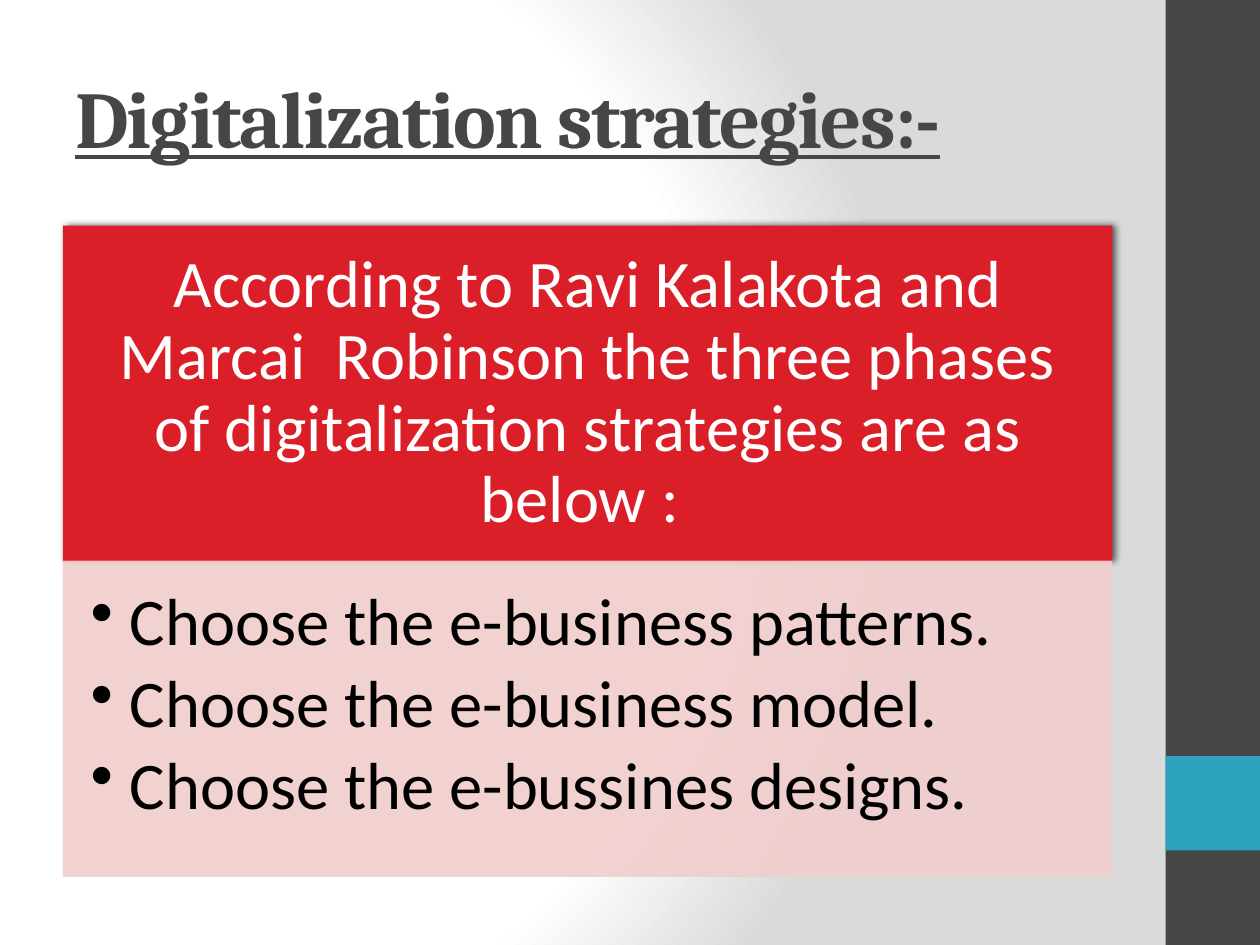
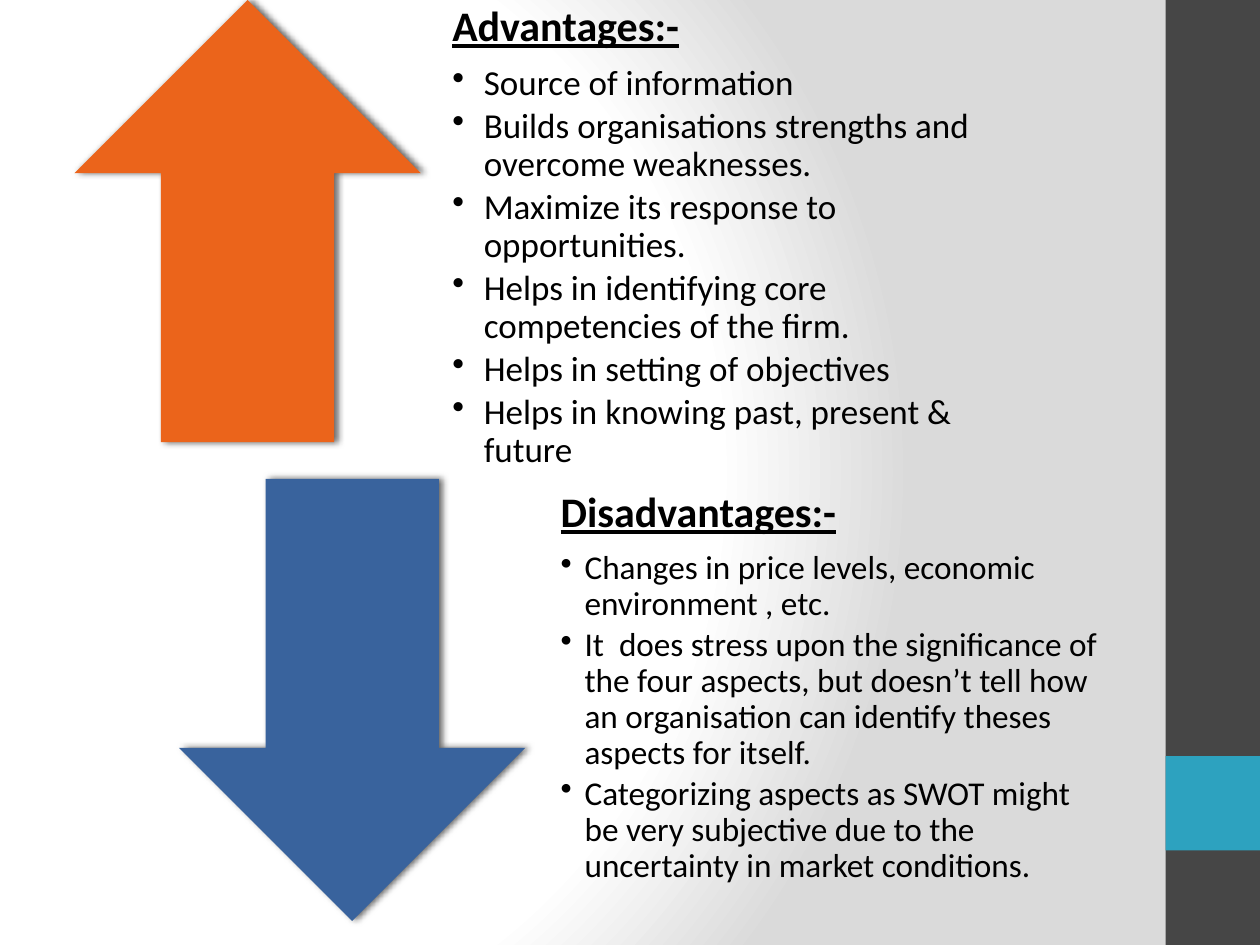
"""Builds two slides on digitalization strategies and SWOT analysis."""
import dataclasses

import pptx
import pptx.dml.color
import pptx.enum.shapes
import pptx.enum.text
import pptx.oxml
import pptx.oxml.ns
import pptx.util

SHAPE = pptx.enum.shapes.MSO_SHAPE
ALIGN = pptx.enum.text.PP_ALIGN
ANCHOR = pptx.enum.text.MSO_ANCHOR
NS = pptx.oxml.ns.nsdecls("a")
PX = 9144


@dataclasses.dataclass(frozen=True)
class Theme:
    heading_font: str = "Cambria"
    body_font: str = "Calibri"
    page: str = "FFFFFF"
    page_edge: str = "DADADA"
    dark: str = "464646"
    accent: str = "2DA2BF"
    red: str = "DA1F28"
    pink: str = "F1CDCD"
    orange: str = "EB641B"
    blue: str = "39639D"
    white: str = "FFFFFF"
    black: str = "000000"
    title_size: int = 46
    panel_size: int = 38
    subhead_size: int = 24
    advantage_size: int = 20
    disadvantage_size: int = 19


T = Theme()

STRATEGIES = [
    "Choose the e-business patterns.",
    "Choose the e-business model.",
    "Choose the e-bussines designs.",
]
ADVANTAGES = [
    "Source of information",
    "Builds organisations strengths and overcome weaknesses.",
    "Maximize its response to opportunities.",
    "Helps in identifying core competencies of the firm.",
    "Helps in setting of objectives",
    "Helps in knowing past, present & future",
]
DISADVANTAGES = [
    "Changes in price levels, economic environment , etc.",
    "It  does stress upon the significance of the four aspects, but "
    "doesn’t tell how an organisation can identify theses aspects for itself.",
    "Categorizing aspects as SWOT might be very subjective due to the "
    "uncertainty in market conditions.",
]


def px(*values):
    return [pptx.util.Emu(v * PX) for v in values]


def rgb(color):
    return pptx.dml.color.RGBColor.from_string(color)


def set_background(prs):
    master = prs.slide_master
    master.background.fill.gradient()
    grad = master.element.find(".//" + pptx.oxml.ns.qn("a:gradFill"))
    stops = [(0, T.page), (75, T.page), (100, T.page_edge)]
    gs = "".join(f'<a:gs pos="{pos * 1000}"><a:srgbClr val="{color}"/></a:gs>'
                 for pos, color in stops)
    grad.getparent().replace(grad, pptx.oxml.parse_xml(
        f'<a:gradFill {NS} rotWithShape="1"><a:gsLst>{gs}</a:gsLst>'
        '<a:path path="circle"><a:fillToRect l="20000" t="50000" r="100000" b="50000"/>'
        '</a:path></a:gradFill>'))


def add_block(s, kind, box, color, shadow=False, opacity=100):
    sp = s.shapes.add_shape(kind, *px(*box))
    sp.shadow.inherit = False
    sp.fill.solid()
    sp.fill.fore_color.rgb = rgb(color)
    sp.line.fill.background()
    if opacity < 100:
        clr = sp.fill._xPr.find(".//" + pptx.oxml.ns.qn("a:srgbClr"))
        clr.append(pptx.oxml.parse_xml(f'<a:alpha {NS} val="{opacity * 1000}"/>'))
    if shadow:
        effects = sp.element.spPr.find(pptx.oxml.ns.qn("a:effectLst"))
        effects.append(pptx.oxml.parse_xml(
            f'<a:outerShdw {NS} blurRad="50800" dist="25400" dir="0" rotWithShape="0">'
            f'<a:srgbClr val="{T.black}"><a:alpha val="60000"/></a:srgbClr></a:outerShdw>'))
    return sp


def set_frame(sp, insets, anchor):
    tf = sp.text_frame
    tf.word_wrap = True
    tf.vertical_anchor = anchor
    tf.margin_left, tf.margin_top, tf.margin_right, tf.margin_bottom = px(*insets)
    return tf


def add_run(p, text, size, color, font=T.body_font, strong=False):
    r = p.add_run()
    r.text = text
    r.font.name = font
    r.font.size = pptx.util.Pt(size)
    r.font.color.rgb = rgb(color)
    r.font.bold = strong
    r.font.underline = strong
    return r


def space_lines(p, size, after):
    p.line_spacing = 0.9
    p.space_after = pptx.util.Pt(round(size * after, 1))


def add_bullets(tf, items, size, indent):
    for item in items:
        p = tf.paragraphs[0] if not tf.paragraphs[0].runs else tf.add_paragraph()
        p.alignment = ALIGN.LEFT
        p.level = 1
        space_lines(p, size, 0.15)
        pPr = p._p.get_or_add_pPr()
        pPr.set("marL", str(indent * PX))
        pPr.set("indent", str(-indent * PX))
        pPr.append(pptx.oxml.parse_xml(f'<a:buChar {NS} char="•"/>'))
        add_run(p, item, size, T.black)


def add_title(s, text):
    sp = s.shapes.add_textbox(*px(50, 30, 833, 125))
    tf = set_frame(sp, (10, 5, 10, 5), ANCHOR.MIDDLE)
    r = add_run(tf.paragraphs[0], text, T.title_size, T.dark, T.heading_font, strong=True)
    r.font._element.set("spc", "-100")


def add_statement(s, box, text):
    sp = add_block(s, SHAPE.RECTANGLE, box, T.red, shadow=True)
    tf = set_frame(sp, (30, 17, 30, 17), ANCHOR.MIDDLE)
    p = tf.paragraphs[0]
    p.alignment = ALIGN.CENTER
    space_lines(p, T.panel_size, 0.35)
    add_run(p, text, T.panel_size, T.white)


def add_bullet_panel(s, box, items):
    sp = add_block(s, SHAPE.RECTANGLE, box, T.pink, opacity=90)
    tf = set_frame(sp, (22, 22, 30, 33), ANCHOR.TOP)
    add_bullets(tf, items, T.panel_size, 31)


def add_arrow_list(s, kind, color, arrow_at, text_at, heading, items, size, inset, indent):
    add_block(s, kind, (*arrow_at, 275, 351), color, shadow=True)
    sp = s.shapes.add_textbox(*px(*text_at, 467, 351))
    tf = set_frame(sp, (inset, 0, inset, inset), ANCHOR.MIDDLE)
    p = tf.paragraphs[0]
    space_lines(p, T.subhead_size, 0.35)
    add_run(p, heading, T.subhead_size, T.black, strong=True)
    add_bullets(tf, items, size, indent)


def add_slide(prs):
    s = prs.slides.add_slide(prs.slide_layouts[6])
    add_block(s, SHAPE.RECTANGLE, (925, 0, 75, 750), T.dark)
    add_block(s, SHAPE.RECTANGLE, (925, 600, 75, 75), T.accent)
    return s


def build_strategies(prs):
    s = add_slide(prs)
    add_title(s, "Digitalization strategies:-")
    add_statement(s, (50, 179, 833, 267),
                  "According to Ravi Kalakota and Marcai  Robinson the three phases "
                  "of digitalization strategies are as below : ")
    add_bullet_panel(s, (50, 445, 833, 251), STRATEGIES)


def build_swot(prs):
    s = add_slide(prs)
    add_arrow_list(s, SHAPE.UP_ARROW, T.orange, (59, 0), (343, 21),
                   "Advantages:-", ADVANTAGES, T.advantage_size, 16, 25)
    add_arrow_list(s, SHAPE.DOWN_ARROW, T.blue, (142, 380), (426, 380),
                   "Disadvantages:-", DISADVANTAGES, T.disadvantage_size, 19, 19)


def main():
    prs = pptx.Presentation()
    prs.slide_width, prs.slide_height = px(1000, 750)
    set_background(prs)
    build_strategies(prs)
    build_swot(prs)
    prs.save("out.pptx")


if __name__ == "__main__":
    main()
